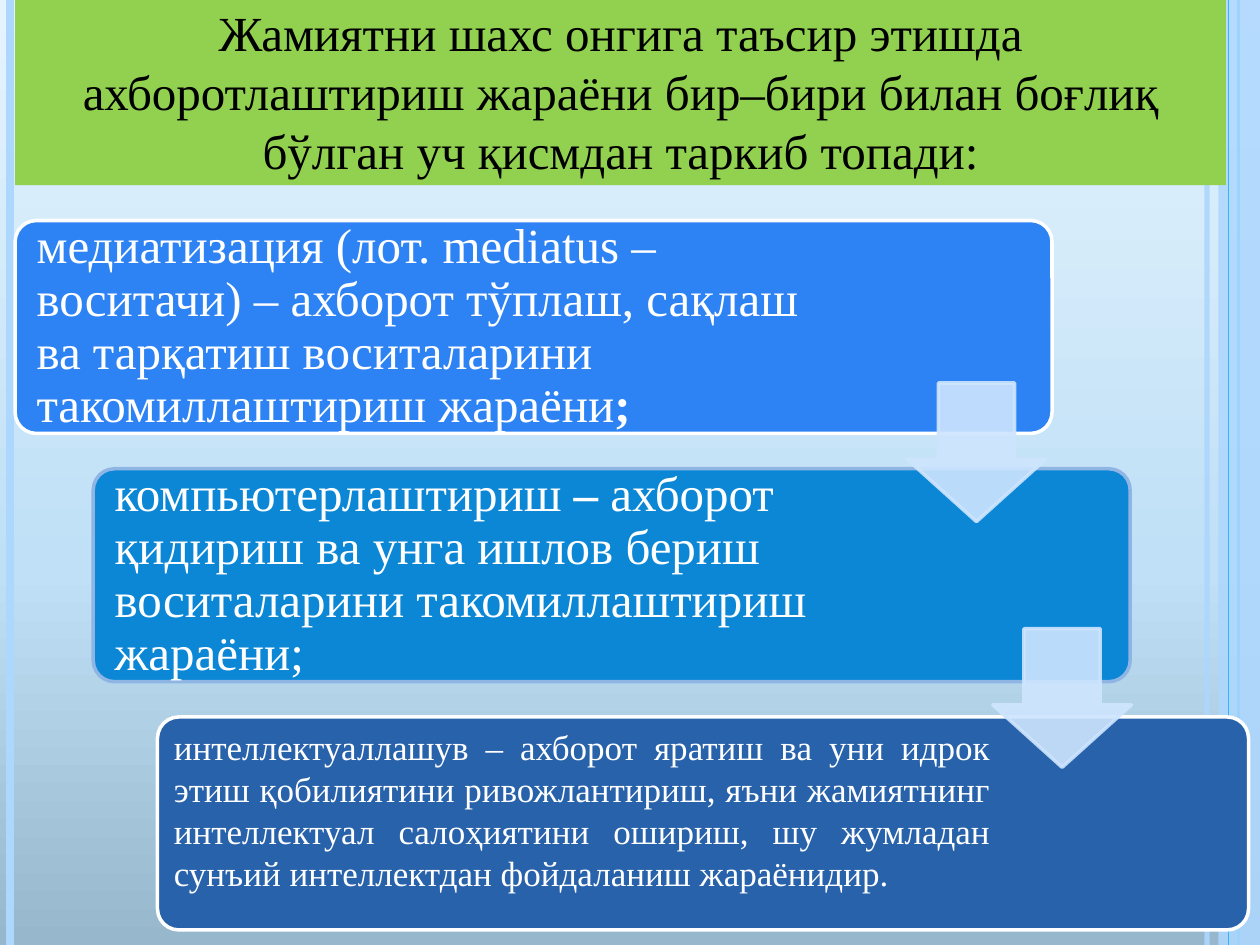
from copy import deepcopy
from dataclasses import dataclass
from typing import NamedTuple

from lxml.etree import SubElement
from pptx import Presentation
from pptx.dml.color import RGBColor
from pptx.enum.shapes import MSO_CONNECTOR, MSO_SHAPE as Shape
from pptx.enum.text import MSO_ANCHOR as Anchor, MSO_AUTO_SIZE, PP_ALIGN as Align
from pptx.oxml.ns import qn
from pptx.util import Inches, Pt

WIDE, HIGH = 10, 7.5
TOP, PITCH, CARD = 1.75, 1.97, 1.69  # first row, row step, card height
PAD = 0.05  # card edge to text box


@dataclass(frozen=True)
class Theme:
    font: str = "Times New Roman"
    big: int = 28
    small: int = 20
    ink: str = "000000"
    white: str = "FFFFFF"
    banner: str = "92D050"
    pale: str = "AED7FE"
    sky: str = "31B6FD"
    arrow: str = "CEE5FE"
    sheet: tuple = ((0, "97B7CC"), (0.4, "BFE0F6"), (1, "E5F3FE"))


class Rail(NamedTuple):
    left: float
    width: float
    color: str
    alpha: int = 100


class Card(NamedTuple):
    left: float
    width: float
    span: float  # width of the text
    fill: str
    edge: str
    runs: tuple  # (text, bold)
    dense: bool = False


class Arrow(NamedTuple):
    left: float
    top: float


THEME = Theme()

RAILS = (
    Rail(9.58, 3, THEME.pale, 93),
    Rail(0.08, 4.5, THEME.pale),
    Rail(9.83, 1.5, THEME.sky),
)
EDGE = Rail(9.75, 0.75, THEME.sky)

TITLE = ("Жамиятни шахс онгига таъсир этишда ахборотлаштириш жараёни "
         "бир–бири билан боғлиқ бўлган уч қисмдан таркиб топади:")

CARDS = (
    Card(0.12, 8.23, 6.41, "2D83F4", THEME.white, (
        ("медиатизация (лот. mediatus – воситачи) – ахборот тўплаш, сақлаш "
         "ва тарқатиш воситаларини такомиллаштириш жараёни", False),
        (";", True))),
    Card(0.74, 8.23, 6.31, "0B87D6", "8FB5E5", (
        ("компьютерлаштириш ", False),
        ("– ", True),
        ("ахборот қидириш ва унга ишлов бериш воситаларини "
         "такомиллаштириш жараёни;", False))),
    Card(1.25, 8.66, 6.64, "2862AA", THEME.white, (
        ("интеллектуаллашув – ахборот яратиш ва уни идрок этиш қобилиятини "
         "ривожлантириш, яъни жамиятнинг интеллектуал салоҳиятини ошириш, шу "
         "жумладан сунъий интеллектдан фойдаланиш жараёнидир.", False),),
        dense=True),
)
ARROWS = (Arrow(7.2, 3.04), Arrow(7.88, 4.99))


def rgb(code: str) -> RGBColor:
    return RGBColor.from_string(code)


def fade(part, alpha: int) -> None:
    """Set the opacity, in percent, of every colour below an XML element."""
    for color in part.iter(qn("a:srgbClr")):
        SubElement(color, qn("a:alpha"), val=str(alpha * 1000))


def paint_sheet(slide) -> None:
    fill = slide.background.fill
    fill.gradient()
    fill.gradient_angle = 90
    stops = next(slide.element.iter(qn("a:gsLst")))
    stops.append(deepcopy(stops[-1]))
    for stop, (place, color) in zip(fill.gradient_stops, THEME.sheet):
        stop.position = place
        stop.color.rgb = rgb(color)


def draw_rail(slide, rail: Rail) -> None:
    x = Inches(rail.left)
    line = slide.shapes.add_connector(
        MSO_CONNECTOR.STRAIGHT, x, 0, x, Inches(HIGH))
    line.line.color.rgb = rgb(rail.color)
    line.line.width = Pt(rail.width)
    props = line.element.spPr
    if rail.alpha < 100:
        fade(props, rail.alpha)
    SubElement(props, qn("a:effectLst"))


def draw_shape(slide, kind, box: tuple, fill: str, edge: str = "",
               adjust: tuple = (), alpha: int = 100) -> None:
    shape = slide.shapes.add_shape(kind, *map(Inches, box))
    shape.shadow.inherit = False
    for i, value in enumerate(adjust):
        shape.adjustments[i] = value
    shape.fill.solid()
    shape.fill.fore_color.rgb = rgb(fill)
    if edge:
        shape.line.color.rgb = rgb(edge)
        shape.line.width = Pt(2)
    else:
        shape.line.fill.background()
    if alpha < 100:
        fade(shape.element.spPr, alpha)


def set_font(para, size: int, color: str) -> None:
    para.font.name = THEME.font
    para.font.size = Pt(size)
    para.font.color.rgb = rgb(color)


def place_title(slide) -> None:
    title = slide.shapes.title
    slide.shapes.element.append(title.element)  # in front of the rails
    title.left, title.top, title.width, title.height = map(
        Inches, (0.12, 0, 9.61, 1.47))
    title.fill.solid()
    title.fill.fore_color.rgb = rgb(THEME.banner)
    frame = title.text_frame
    frame.text = TITLE
    frame.auto_size = MSO_AUTO_SIZE.NONE
    frame.vertical_anchor = Anchor.BOTTOM
    para = frame.paragraphs[0]
    para.alignment = Align.CENTER
    set_font(para, THEME.big, THEME.ink)


def draw_card(slide, row: int, card: Card) -> None:
    top = TOP + row * PITCH
    draw_shape(slide, Shape.ROUNDED_RECTANGLE,
               (card.left, top, card.width, CARD), card.fill, card.edge, (0.1,))
    box = slide.shapes.add_textbox(*map(Inches, (
        card.left + PAD, top + PAD, card.span, CARD - 2 * PAD)))
    frame = box.text_frame
    frame.word_wrap = True
    inset = Inches(0.08 if card.dense else 0.12)
    frame.margin_left = frame.margin_right = inset
    frame.margin_top = frame.margin_bottom = inset
    para = frame.paragraphs[0]
    if card.dense:
        frame.vertical_anchor = Anchor.TOP
        frame.margin_top = Inches(0.02)
        para.alignment = Align.JUSTIFY
    else:
        frame.vertical_anchor = Anchor.MIDDLE
        para.line_spacing = 0.9
    set_font(para, THEME.small if card.dense else THEME.big, THEME.white)
    for text, bold in card.runs:
        run = para.add_run()
        run.text = text
        run.font.bold = bold


def main() -> None:
    deck = Presentation()
    deck.slide_width, deck.slide_height = Inches(WIDE), Inches(HIGH)
    slide = deck.slides.add_slide(deck.slide_layouts[5])
    paint_sheet(slide)
    for rail in RAILS:
        draw_rail(slide, rail)
    draw_shape(slide, Shape.RECTANGLE, (9.67, 0, 0.33, HIGH),
               THEME.pale, alpha=87)
    draw_rail(slide, EDGE)
    place_title(slide)
    for row, card in enumerate(CARDS):
        draw_card(slide, row, card)
    for arrow in ARROWS:
        draw_shape(slide, Shape.DOWN_ARROW, (*arrow, 1.1, 1.1), THEME.arrow,
                   THEME.arrow, (0.55, 0.45), alpha=90)
    deck.save("out.pptx")


if __name__ == "__main__":
    main()
